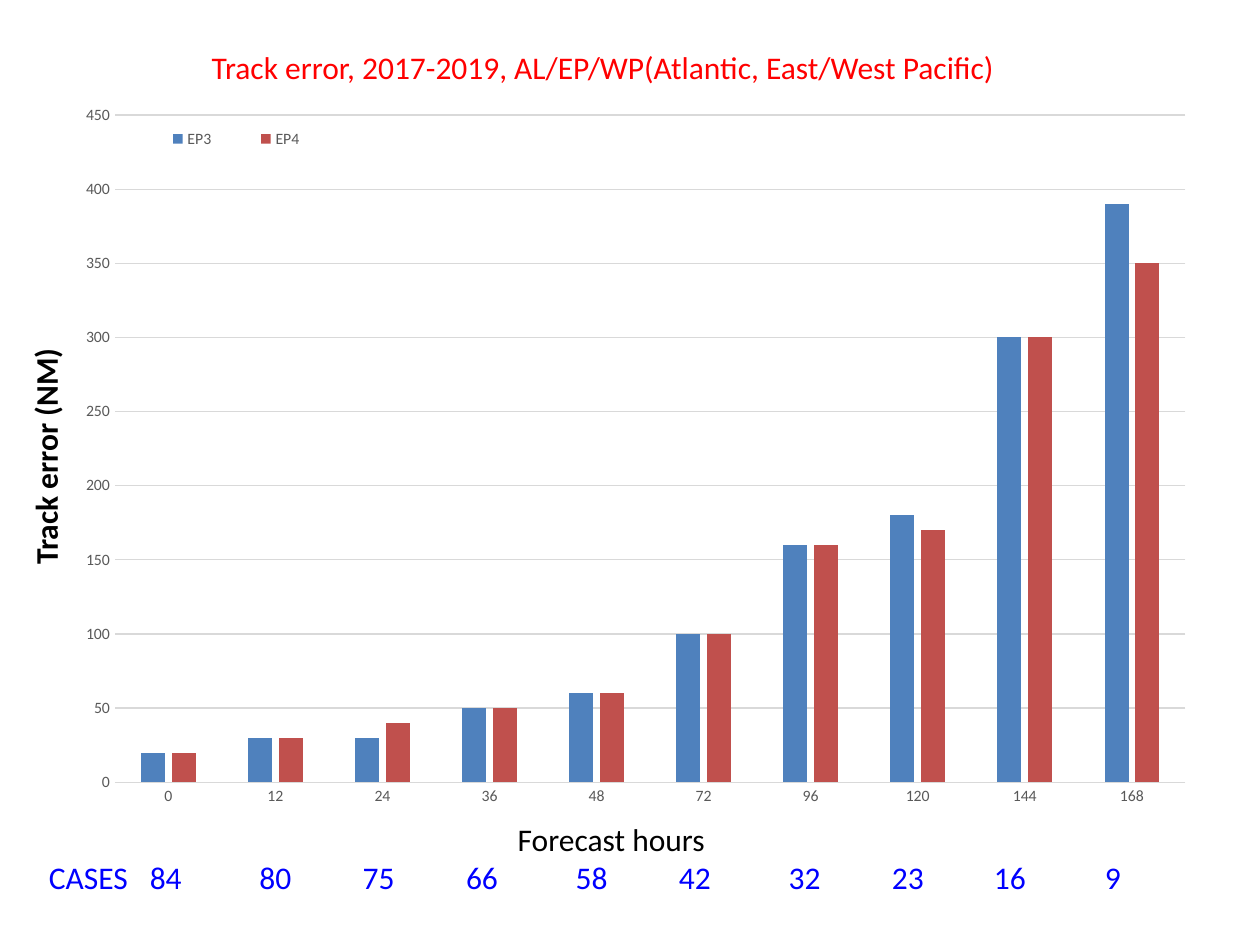
from lxml import etree
from pptx import Presentation
from pptx import util as u
from pptx.chart.data import CategoryChartData
from pptx.dml.color import RGBColor
from pptx.enum import chart as ch, text
from pptx.oxml.ns import qn

FONT = "Calibri"
TITLE = "Track error, 2017-2019, AL/EP/WP(Atlantic, East/West Pacific)"
HOURS = ["0", "12", "24", "36", "48", "72", "96", "120", "144", "168"]
ERRORS = [  # name, colour, track error in nautical miles
    ("EP3", "4F81BD", [20, 30, 30, 50, 60, 100, 160, 180, 300, 390]),
    ("EP4", "C0504D", [20, 30, 40, 50, 60, 100, 160, 170, 300, 350]),
]
CASES = ["84", "80", "75", "66", "58", "42", "32", "23", "16", "9"]
CASE_TABS = [0.8, 1.67, 2.49, 3.31, 4.18, 5, 5.87, 6.69, 7.5, 8.38]
HOURS_TAB = 3.72
GREY, RULE = "595959", "D9D9D9"


def rgb(value):
    return RGBColor.from_string(value)


def set_font(font, size, color, bold=False):
    font.name, font.size, font.bold = FONT, u.Pt(size), bold
    font.color.rgb = rgb(color)


def place(sp, left, top, width, height):
    sp.left, sp.top, sp.width, sp.height = map(u.Inches, (left, top, width, height))


def write(sp, lines, wrap=True):
    """Fill a shape with left-aligned (text, colour, bold) paragraphs."""
    tf = sp.text_frame
    tf.word_wrap = wrap
    tf.auto_size = text.MSO_AUTO_SIZE.NONE
    tf.vertical_anchor = text.MSO_ANCHOR.TOP
    for i, (line, color, bold) in enumerate(lines):
        p = tf.add_paragraph() if i else tf.paragraphs[0]
        p.text, p.alignment = line, text.PP_ALIGN.LEFT
        set_font(p.font, 18, color, bold)
    return tf


def add_tabs(p, stops):
    pPr = p._p.get_or_add_pPr()
    tabs = etree.Element(qn("a:tabLst"))
    for stop in stops:
        etree.SubElement(tabs, qn("a:tab"), pos=str(u.Inches(stop)), algn="l")
    pPr.insert(0, tabs)


def set_layout(parent, after, target, x, y, w, h):
    """Give a plot area or legend a manual layout in shares of the chart."""
    for old in parent.findall(qn("c:layout")):
        parent.remove(old)
    layout = etree.Element(qn("c:layout"))
    manual = etree.SubElement(layout, qn("c:manualLayout"))
    values = [("xMode", "edge"), ("yMode", "edge"), ("x", x), ("y", y), ("w", w), ("h", h)]
    if target:
        values.insert(0, ("layoutTarget", target))
    for tag, value in values:
        etree.SubElement(manual, qn("c:" + tag), val=str(value))
    if after is None:
        parent.insert(0, layout)
    else:
        parent.find(qn(after)).addnext(layout)


def add_error_chart(s):
    data = CategoryChartData()
    data.categories = HOURS
    for name, _, values in ERRORS:
        data.add_series(name, values)
    box = map(u.Inches, (0.57, 0.76, 9, 5.7))
    chart = s.shapes.add_chart(ch.XL_CHART_TYPE.COLUMN_CLUSTERED, *box, data).chart
    set_font(chart.font, 10, "000000")
    chart.has_title = False

    plot = chart.plots[0]
    plot.gap_width, plot.overlap, plot.vary_by_categories = 219, -27, False
    for series, (_, color, _) in zip(plot.series, ERRORS):
        series.format.fill.solid()
        series.format.fill.fore_color.rgb = rgb(color)

    hours, miles = chart.category_axis, chart.value_axis
    for axis in (hours, miles):
        axis.major_tick_mark = axis.minor_tick_mark = ch.XL_TICK_MARK.NONE
        set_font(axis.tick_labels.font, 9, GREY)
    miles.minimum_scale, miles.maximum_scale, miles.major_unit = 0, 450, 50
    miles.format.line.fill.background()
    for line in (hours.format.line, miles.major_gridlines.format.line):
        line.color.rgb, line.width = rgb(RULE), u.Pt(0.75)

    chart.has_legend = True
    legend = chart.legend
    legend.position = ch.XL_LEGEND_POSITION.BOTTOM
    legend.include_in_layout = True
    set_font(legend.font, 9, GREY)
    set_layout(legend._element, "c:legendPos", None, 0.05, 0.03, 0.19, 0.06)
    set_layout(plot._element.getparent(), None, "inner", 0.038, 0.027, 0.944, 0.929)


def main():
    prs = Presentation()
    prs.slide_width, prs.slide_height = u.Inches(10), u.Inches(7.5)
    s = prs.slides.add_slide(prs.slide_layouts[5])

    title = s.shapes.title
    place(title, 1.58, 0.33, 6.5, 0.4)
    write(title, [(TITLE, "FF0000", False)])

    axis_name = s.shapes.add_textbox(0, 0, 0, 0)
    place(axis_name, -0.6, 3.41, 1.93, 0.41)
    axis_name.rotation = 270
    write(axis_name, [("Track error (NM)", "000000", True)], wrap=False)

    footer = s.shapes.add_textbox(0, 0, 0, 0)
    place(footer, 0.29, 6.46, 9.08, 0.71)
    tf = write(footer, [
        ("\tForecast hours", "000000", False),
        ("\t".join(["CASES"] + CASES), "0000FF", False),
    ])
    for p, stops in zip(tf.paragraphs, ([HOURS_TAB], CASE_TABS)):
        add_tabs(p, stops)

    add_error_chart(s)
    prs.save("out.pptx")


if __name__ == "__main__":
    main()
